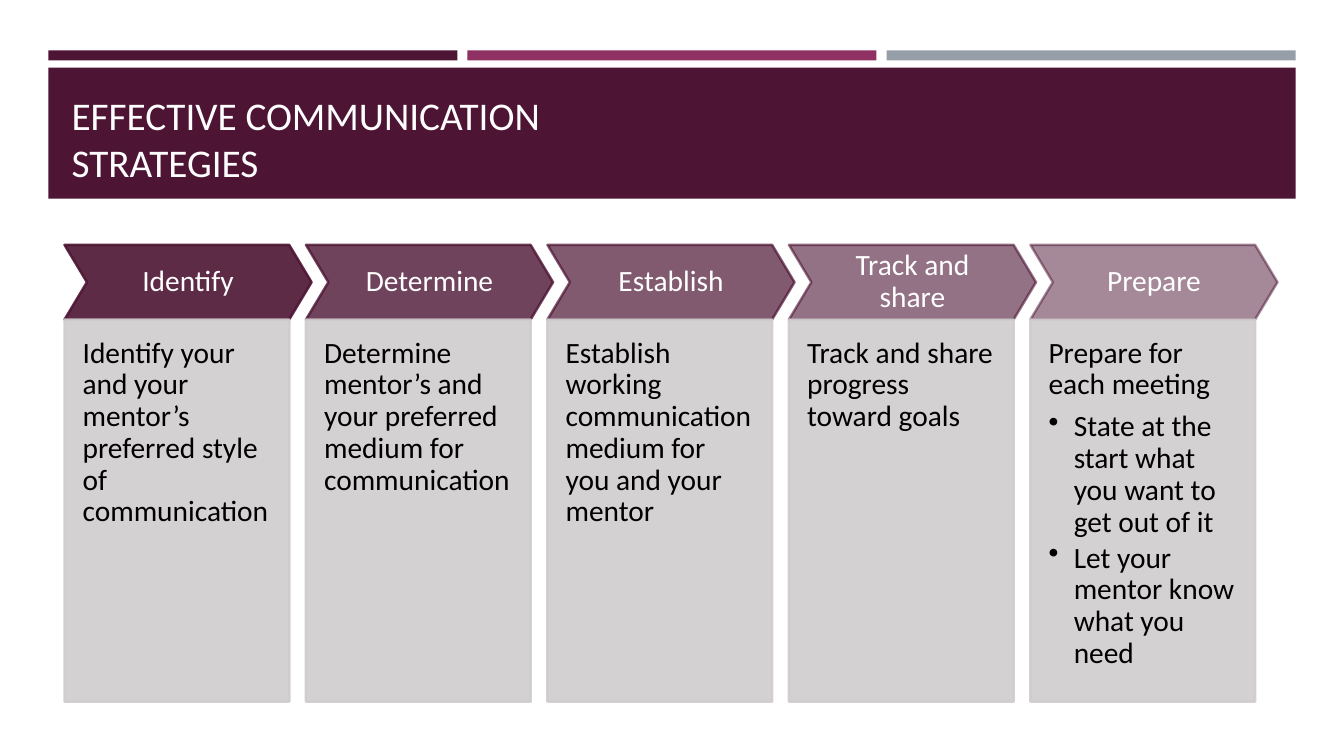
from dataclasses import dataclass
from typing import NamedTuple

from lxml.etree import SubElement
from pptx import Presentation
from pptx.dml.color import RGBColor
from pptx.enum.shapes import MSO_SHAPE as Preset
from pptx.enum.text import MSO_ANCHOR as Anchor, MSO_AUTO_SIZE as AutoSize, PP_ALIGN as Align
from pptx.oxml.ns import qn
from pptx.util import Emu, Pt

EMU_PER_PX = 9144  # 100 px to the inch
TITLE_ONLY = 5


@dataclass(frozen=True)
class Theme:
    font: str = "Calibri"
    plum: str = "4D1434"
    berry: str = "903163"
    slate: str = "969FA7"
    panel: str = "D0CCCE"
    on_dark: str = "FFFFFF"
    title_text: str = "FFFEFF"
    body_text: str = "000000"
    title_size: int = 28
    body_size: int = 21
    outline: float = 1.75


class Box(NamedTuple):
    left: float
    top: float
    width: float
    height: float


THEME = Theme()
TITLE_LINES = ["EFFECTIVE COMMUNICATION", "STRATEGIES"]
# Heading, description, bullets
STEPS = [
    ("Identify", "Identify your and your mentor’s preferred style of communication", []),
    ("Determine", "Determine mentor’s and your preferred medium for communication", []),
    ("Establish", "Establish working communication medium for you and your mentor", []),
    ("Track and share", "Track and share progress toward goals", []),
    ("Prepare", "Prepare for each meeting",
     ["State at the start what you want to get out of it",
      "Let your mentor know what you need"]),
]


def px(length):
    return Emu(round(length * EMU_PER_PX))


def set_color(color_format, color, opacity):
    color_format.rgb = RGBColor.from_string(color)
    if opacity < 100:
        rgb = color_format._xFill.find(qn("a:srgbClr"))
        SubElement(rgb, qn("a:alpha"), val=str(opacity * 1000))


def add_block(slide, preset, box, color, opacity=100, outlined=False):
    block = slide.shapes.add_shape(preset, *map(px, box))
    block.shadow.inherit = False
    block.fill.solid()
    set_color(block.fill.fore_color, color, opacity)
    if outlined:
        block.line.width = Pt(THEME.outline)
        block.line.fill.solid()
        set_color(block.line.fill.fore_color, color, opacity)
    else:
        block.line.fill.background()
    return block


def set_frame(frame, anchor, left, top, right, bottom):
    frame.word_wrap = True
    frame.auto_size = AutoSize.NONE
    frame.vertical_anchor = anchor
    frame.margin_left, frame.margin_top = px(left), px(top)
    frame.margin_right, frame.margin_bottom = px(right), px(bottom)


def add_run(paragraph, text, size, color):
    run = paragraph.add_run()
    run.text = text
    run.font.name = THEME.font
    run.font.size = Pt(size)
    run.font.color.rgb = RGBColor.from_string(color)


def write_step_text(paragraph, text, color, align=Align.LEFT, gap=0.35):
    paragraph.alignment = align
    paragraph.line_spacing = 0.9
    paragraph.space_after = Pt(round(gap * THEME.body_size, 2))
    add_run(paragraph, text, THEME.body_size, color)


def add_bullet(paragraph, indent):
    props = paragraph._p.get_or_add_pPr()
    props.set("marL", str(px(indent)))
    props.set("indent", str(px(-indent)))
    SubElement(props, qn("a:buChar"), char="•")


def build_header(slide, box):
    # Three accent bars
    gap, bar_height = 10, 10
    bar_width = (box.width - 2 * gap) / 3
    for i, color in enumerate([THEME.plum, THEME.berry, THEME.slate]):
        bar = Box(box.left + i * (bar_width + gap), box.top, bar_width, bar_height)
        add_block(slide, Preset.RECTANGLE, bar, color)

    # Title band
    band = Box(box.left, box.top + 17, box.width, box.height - 17)
    add_block(slide, Preset.RECTANGLE, band, THEME.plum)

    # Title, brought in front of its band
    title = slide.shapes.title
    slide.shapes._spTree.append(title._element)
    title.left, title.top = px(band.left + 16), px(band.top + 10)
    title.width, title.height = px(band.width - 31), px(band.height - 19)
    set_frame(title.text_frame, Anchor.BOTTOM, 7, 4, 7, 4)
    paragraph = title.text_frame.paragraphs[0]
    paragraph.alignment = Align.LEFT
    for i, line in enumerate(TITLE_LINES):
        if i:
            paragraph.add_line_break()
        add_run(paragraph, line, THEME.title_size, THEME.title_text)


def build_step(slide, box, step, opacity):
    heading, description, bullets = step
    head_height, tip = 74, 22

    # Chevron heading
    chevron = add_block(slide, Preset.CHEVRON, box._replace(height=head_height),
                        THEME.plum, opacity, outlined=True)
    chevron.adjustments[0] = 0.3
    set_frame(chevron.text_frame, Anchor.MIDDLE, 9, 9, 9, 9)
    write_step_text(chevron.text_frame.paragraphs[0], heading, THEME.on_dark, Align.CENTER)

    # Description panel
    panel_box = Box(box.left, box.top + head_height, box.width - tip, box.height - head_height)
    panel = add_block(slide, Preset.RECTANGLE, panel_box, THEME.panel, 90, outlined=True)
    frame = panel.text_frame
    set_frame(frame, Anchor.TOP, 18, 18, 18, 35)
    write_step_text(frame.paragraphs[0], description, THEME.body_text)
    for text in bullets:
        paragraph = frame.add_paragraph()
        paragraph.level = 1
        write_step_text(paragraph, text, THEME.body_text, gap=0.15)
        add_bullet(paragraph, 25)


def build_process(slide, box):
    step_width = 245
    pitch = (box.width - step_width) / (len(STEPS) - 1)
    for i, step in enumerate(STEPS):
        step_box = Box(box.left + i * pitch, box.top, step_width, box.height)
        build_step(slide, step_box, step, opacity=90 - 10 * i)


def main():
    deck = Presentation()
    deck.slide_width, deck.slide_height = px(1333), px(750)
    slide = deck.slides.add_slide(deck.slide_layouts[TITLE_ONLY])
    build_header(slide, Box(48, 50, 1237, 147))
    build_process(slide, Box(64, 243, 1203, 453))
    deck.save("out.pptx")


if __name__ == "__main__":
    main()
